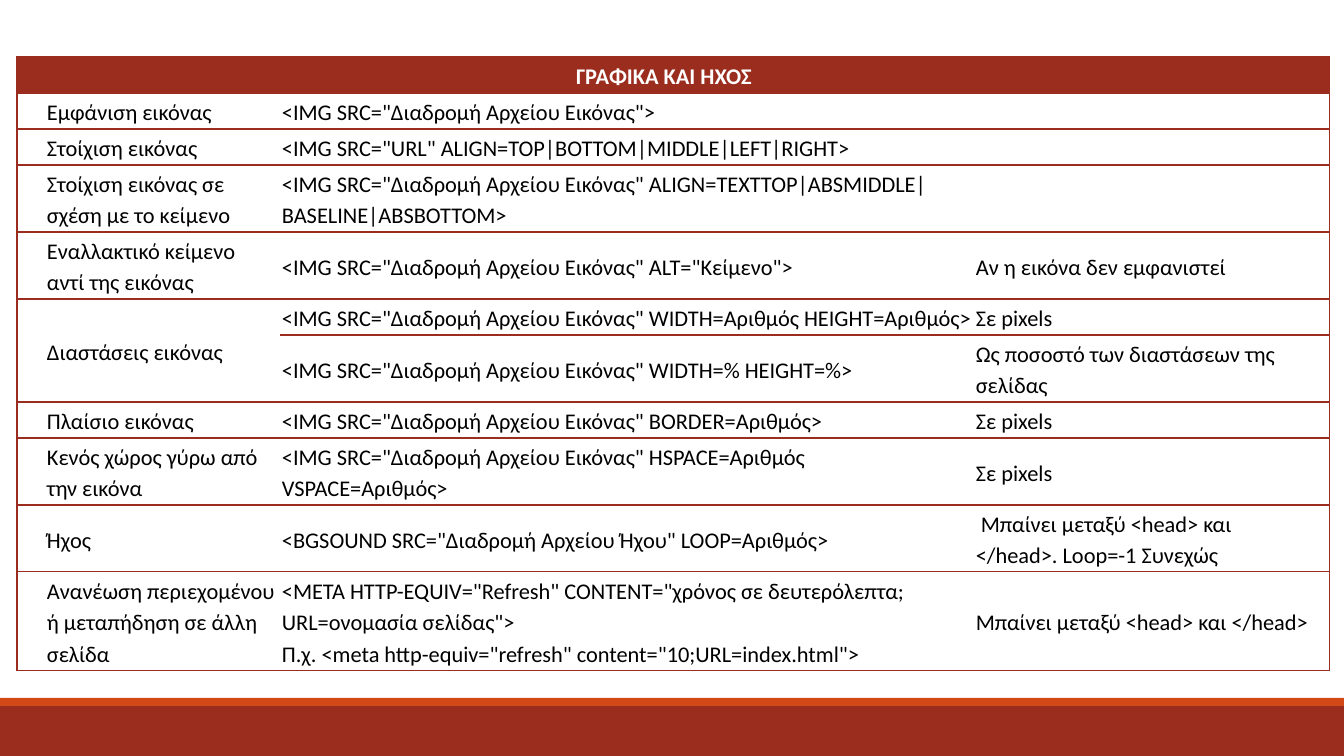
from dataclasses import dataclass

from lxml.etree import SubElement
from pptx import Presentation
from pptx.dml.color import RGBColor
from pptx.enum.shapes import MSO_SHAPE
from pptx.enum.text import MSO_ANCHOR, PP_ALIGN
from pptx.oxml.ns import qn
from pptx.util import Pt

W, H = 1344, 756
EMU_PER_PX = 12192000 / W


@dataclass(frozen=True)
class Theme:
    font: str = "Calibri"
    size: int = 16
    brick: str = "9B2D1F"
    orange: str = "D34817"
    white: str = "FFFFFF"
    black: str = "000000"
    rule: int = 1
    inset: int = 2


THEME = Theme()
COLUMNS = (28, 235, 694, 337, 19)  # outer columns are side margins
ROW_HEIGHT = {1: 36, 2: 67, 3: 98}  # by number of text lines
HEADING = "ΓΡΑΦΙΚΑ ΚΑΙ ΗΧΟΣ"

# Text lines in the row, purpose, tag, remark
ROWS = [
    (1, "Εμφάνιση εικόνας", '<IMG SRC="Διαδρομή Αρχείου Εικόνας">', ""),
    (1, "Στοίχιση εικόνας",
     '<IMG SRC="URL" ALIGN=TOP|BOTTOM|MIDDLE|LEFT|RIGHT>', ""),
    (2, "Στοίχιση εικόνας σε σχέση με το κείμενο",
     '<IMG SRC="Διαδρομή Αρχείου Εικόνας" '
     'ALIGN=TEXTTOP|ABSMIDDLE|BASELINE|ABSBOTTOM>', ""),
    (2, "Εναλλακτικό κείμενο αντί της εικόνας",
     '<IMG SRC="Διαδρομή Αρχείου Εικόνας" ALT="Κείμενο">',
     "Αν η εικόνα δεν εμφανιστεί"),
    (1, "Διαστάσεις εικόνας",
     '<IMG SRC="Διαδρομή Αρχείου Εικόνας" WIDTH=Αριθμός HEIGHT=Αριθμός>',
     "Σε pixels"),
    (2, "", '<IMG SRC="Διαδρομή Αρχείου Εικόνας" WIDTH=% HEIGHT=%>',
     "Ως ποσοστό των διαστάσεων της σελίδας"),
    (1, "Πλαίσιο εικόνας",
     '<IMG SRC="Διαδρομή Αρχείου Εικόνας" BORDER=Αριθμός>', "Σε pixels"),
    (2, "Κενός χώρος γύρω από την εικόνα",
     '<IMG SRC="Διαδρομή Αρχείου Εικόνας" HSPACE=Αριθμός VSPACE=Αριθμός>',
     "Σε pixels"),
    (2, "Ήχος", '<BGSOUND SRC="Διαδρομή Αρχείου Ήχου" LOOP=Αριθμός>',
     " Μπαίνει μεταξύ <head> και </head>. Loop=-1 Συνεχώς"),
    (3, "Ανανέωση περιεχομένου ή μεταπήδηση σε άλλη σελίδα",
     '<META HTTP-EQUIV="Refresh" CONTENT="χρόνος σε δευτερόλεπτα; '
     'URL=ονομασία σελίδας">\v'
     'Π.χ. <meta http-equiv="refresh" content="10;URL=index.html">',
     "Μπαίνει μεταξύ <head> και </head>"),
]
SIZES_ROW = 5  # image dimensions take this row and the next


def px(n):
    return round(n * EMU_PER_PX)


def set_all(obj, values):
    for name, value in values.items():
        setattr(obj, name, value)


def add_band(s, box, color):
    sp = s.shapes.add_shape(MSO_SHAPE.RECTANGLE, *map(px, box))
    sp.shadow.inherit = False
    sp.fill.solid()
    sp.fill.fore_color.rgb = RGBColor.from_string(color)
    sp.line.fill.background()


def add_footer(s, box):
    x, y, w, h = box
    stripe = 8
    add_band(s, (x, y + stripe, w, h - stripe), THEME.brick)
    add_band(s, (x, y, w, stripe), THEME.orange)


def set_borders(cell, ruled):
    tcPr = cell._tc.get_or_add_tcPr()
    for position, side in enumerate(("lnL", "lnR", "lnT", "lnB")):
        ln = SubElement(tcPr, qn(f"a:{side}"), w=str(Pt(THEME.rule)))
        tcPr.insert(position, ln)
        if side in ruled:
            fill = SubElement(ln, qn("a:solidFill"))
            SubElement(fill, qn("a:srgbClr"), val=THEME.brick)
        else:
            SubElement(ln, qn("a:noFill"))


def write(cell, text, color, bold=False, align=PP_ALIGN.LEFT):
    p = cell.text_frame.paragraphs[0]
    p.text = text
    set_all(p, {"alignment": align, "line_spacing": 1.15,
                "space_after": Pt(10)})
    for r in p.runs:
        set_all(r.font, {"name": THEME.font, "size": Pt(THEME.size),
                         "bold": bold})
        r.font.color.rgb = RGBColor.from_string(color)


def add_tag_table(s, box):
    heights = [ROW_HEIGHT[n] for n in (1, *(row[0] for row in ROWS))]
    x, y, w = box
    frame = s.shapes.add_table(len(heights), len(COLUMNS),
                               *map(px, (x, y, w, sum(heights))))
    table = frame.table
    set_all(table, {"first_row": False, "horz_banding": False})
    for column, width in zip(table.columns, COLUMNS):
        column.width = px(width)
    for row, height in zip(table.rows, heights):
        row.height = px(height)

    # Cell frames and fills
    last = len(COLUMNS) - 1
    margins = {f"margin_{side}": px(THEME.inset)
               for side in ("left", "right", "top", "bottom")}
    for i in range(len(heights)):
        for j in range(len(COLUMNS)):
            cell = table.cell(i, j)
            set_all(cell, {"vertical_anchor": MSO_ANCHOR.MIDDLE, **margins})
            if i == 0:
                cell.fill.solid()
                cell.fill.fore_color.rgb = RGBColor.from_string(THEME.brick)
            else:
                cell.fill.background()
            outer = {0: {"lnL"}, last: {"lnR"}}.get(j, set())
            set_borders(cell, {"lnT", "lnB"} | outer)

    # Merged cells
    table.cell(0, 0).merge(table.cell(0, last - 1))
    for j in (0, 1):
        table.cell(SIZES_ROW, j).merge(table.cell(SIZES_ROW + 1, j))

    # Text
    write(table.cell(0, 0), HEADING, THEME.white, True, PP_ALIGN.CENTER)
    for i, (_, *texts) in enumerate(ROWS, 1):
        for j, text in enumerate(texts, 1):
            if text:
                write(table.cell(i, j), text, THEME.black)


def main():
    prs = Presentation()
    set_all(prs, {"slide_width": px(W), "slide_height": px(H)})
    s = prs.slides.add_slide(prs.slide_layouts[6])
    add_footer(s, (0, 698, W, H - 698))
    add_tag_table(s, (17, 57, sum(COLUMNS)))
    prs.save("out.pptx")


if __name__ == "__main__":
    main()
